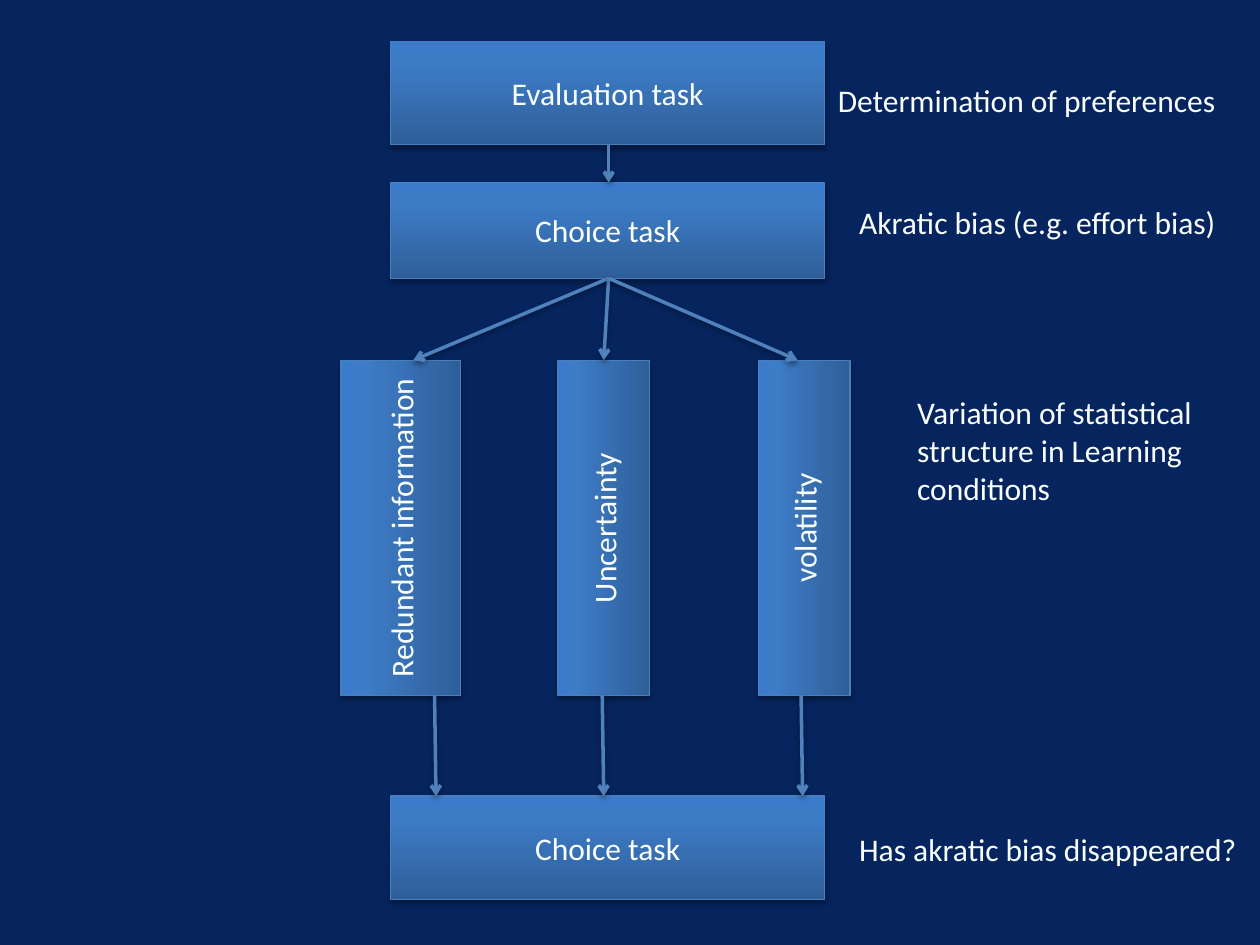
from lxml import etree
from pptx import Presentation
from pptx.dml.color import RGBColor
from pptx.enum.shapes import MSO_CONNECTOR, MSO_SHAPE
from pptx.enum.text import MSO_ANCHOR, MSO_AUTO_SIZE, PP_ALIGN
from pptx.oxml.ns import qn
from pptx.util import Cm, Pt

RECTANGLE = MSO_SHAPE.RECTANGLE
STRAIGHT = MSO_CONNECTOR.STRAIGHT
MIDDLE = MSO_ANCHOR.MIDDLE
CENTER, LEFT = PP_ALIGN.CENTER, PP_ALIGN.LEFT
GROW = MSO_AUTO_SIZE.SHAPE_TO_FIT_TEXT

BACKGROUND, TEXT = "06255F", "FAFFFD"
BOX_EDGE, ARROW = "4B7EBC", "4F81BD"
BOX_STOPS = [(0, "2F5F99"), (80, "3D7CC7"), (100, "3A7CCB")]

# Shared lengths in cm
TASK_LEFT, TASK_WIDTH = 7.87, 8.76
TASK_MIDDLE = 12.27
CONDITION_TOP, CONDITION_HEIGHT = 7.26, 6.76
CONDITION_BOTTOM = CONDITION_TOP + CONDITION_HEIGHT
FINAL_TOP = 16.05

TASKS = [  # text, top, height
    ("Evaluation task", 0.84, 2.08),
    ("Choice task", 3.68, 1.93),
    ("Choice task", FINAL_TOP, 2.08),
]
CONDITIONS = [  # text, middle, width
    ("Redundant information", 8.08, 2.41),
    ("Uncertainty", 12.17, 1.85),
    ("volatility", 16.21, 1.85),
]
NOTES = [  # text, left, top, width, height, wraps
    ("Determination of preferences", 16.64, 1.5, 8.26, 1.02, False),
    ("Akratic bias (e.g. effort bias)", 17.07, 3.96, 7.8, 1.02, False),
    ("Variation of statistical structure in Learning conditions",
     18.24, 7.8, 6.63, 2.57, True),
    ("Has akratic bias disappeared?", 17.07, 16.61, 8.23, 1.02, False),
]


def rgb(value):
    return RGBColor.from_string(value)


def add_child(parent, tag, **attributes):
    child = etree.SubElement(parent, qn(tag))
    for name, value in attributes.items():
        child.set(name, str(value))
    return child


def add_shadow(effects, distance, opacity):
    shadow = add_child(effects, "a:outerShdw", blurRad=40000, dist=distance,
                       dir=5400000, rotWithShape=0)
    black = add_child(shadow, "a:srgbClr", val="000000")
    add_child(black, "a:alpha", val=opacity * 1000)


def fill_gradient(shape):
    shape.fill.gradient()
    shape.fill.gradient_angle = 90
    stops = shape.element.spPr.find(".//" + qn("a:gsLst"))
    for old_stop in list(stops):
        stops.remove(old_stop)
    for position, color in BOX_STOPS:
        stop = add_child(stops, "a:gs", pos=position * 1000)
        add_child(stop, "a:srgbClr", val=color)


def write(frame, text, alignment):
    frame.text = text
    paragraph = frame.paragraphs[0]
    paragraph.alignment = alignment
    paragraph.font.name = "Calibri"
    paragraph.font.size = Pt(18)
    paragraph.font.color.rgb = rgb(TEXT)


def add_box(slide, text, left, top, width, height, rotation=0):
    box = slide.shapes.add_shape(RECTANGLE, Cm(left), Cm(top), Cm(width), Cm(height))
    box.rotation = rotation
    fill_gradient(box)
    box.line.color.rgb = rgb(BOX_EDGE)
    box.line.width = Pt(0.75)
    box.shadow.inherit = False
    add_shadow(box.element.spPr.find(qn("a:effectLst")), 23000, 35)
    box.text_frame.vertical_anchor = MIDDLE
    write(box.text_frame, text, CENTER)


def add_condition(slide, text, middle, width):
    # Turned a quarter left, so the box is laid out lying down
    left = middle - CONDITION_HEIGHT / 2
    top = CONDITION_TOP + (CONDITION_HEIGHT - width) / 2
    add_box(slide, text, left, top, CONDITION_HEIGHT, width, rotation=270)


def add_arrow(slide, x1, y1, x2, y2):
    arrow = slide.shapes.add_connector(STRAIGHT, Cm(x1), Cm(y1), Cm(x2), Cm(y2))
    arrow.line.color.rgb = rgb(ARROW)
    arrow.line.width = Pt(2)
    properties = arrow.element.spPr
    add_child(properties.find(qn("a:ln")), "a:tailEnd", type="arrow")
    add_shadow(add_child(properties, "a:effectLst"), 20000, 38)


def add_note(slide, text, left, top, width, height, wraps):
    note = slide.shapes.add_textbox(Cm(left), Cm(top), Cm(width), Cm(height))
    note.text_frame.word_wrap = wraps
    note.text_frame.auto_size = GROW
    write(note.text_frame, text, LEFT)


def main():
    presentation = Presentation()
    presentation.slide_width, presentation.slide_height = Cm(25.4), Cm(19.05)
    slide = presentation.slides.add_slide(presentation.slide_layouts[6])
    slide.background.fill.solid()
    slide.background.fill.fore_color.rgb = rgb(BACKGROUND)

    # Tasks and learning conditions
    for text, top, height in TASKS:
        add_box(slide, text, TASK_LEFT, top, TASK_WIDTH, height)
    for condition in CONDITIONS:
        add_condition(slide, *condition)

    # Arrows between tasks, to the conditions and on to the final task
    add_arrow(slide, TASK_MIDDLE, 2.92, TASK_MIDDLE, 3.68)
    for end in (8.33, 12.17, 16.08):
        add_arrow(slide, TASK_MIDDLE, 5.61, end, CONDITION_TOP)
    for start, end in ((8.76, 8.79), (12.14, 12.17), (16.15, 16.18)):
        add_arrow(slide, start, CONDITION_BOTTOM, end, FINAL_TOP)

    # Notes on the right
    for note in NOTES:
        add_note(slide, *note)

    presentation.save("out.pptx")


if __name__ == "__main__":
    main()
